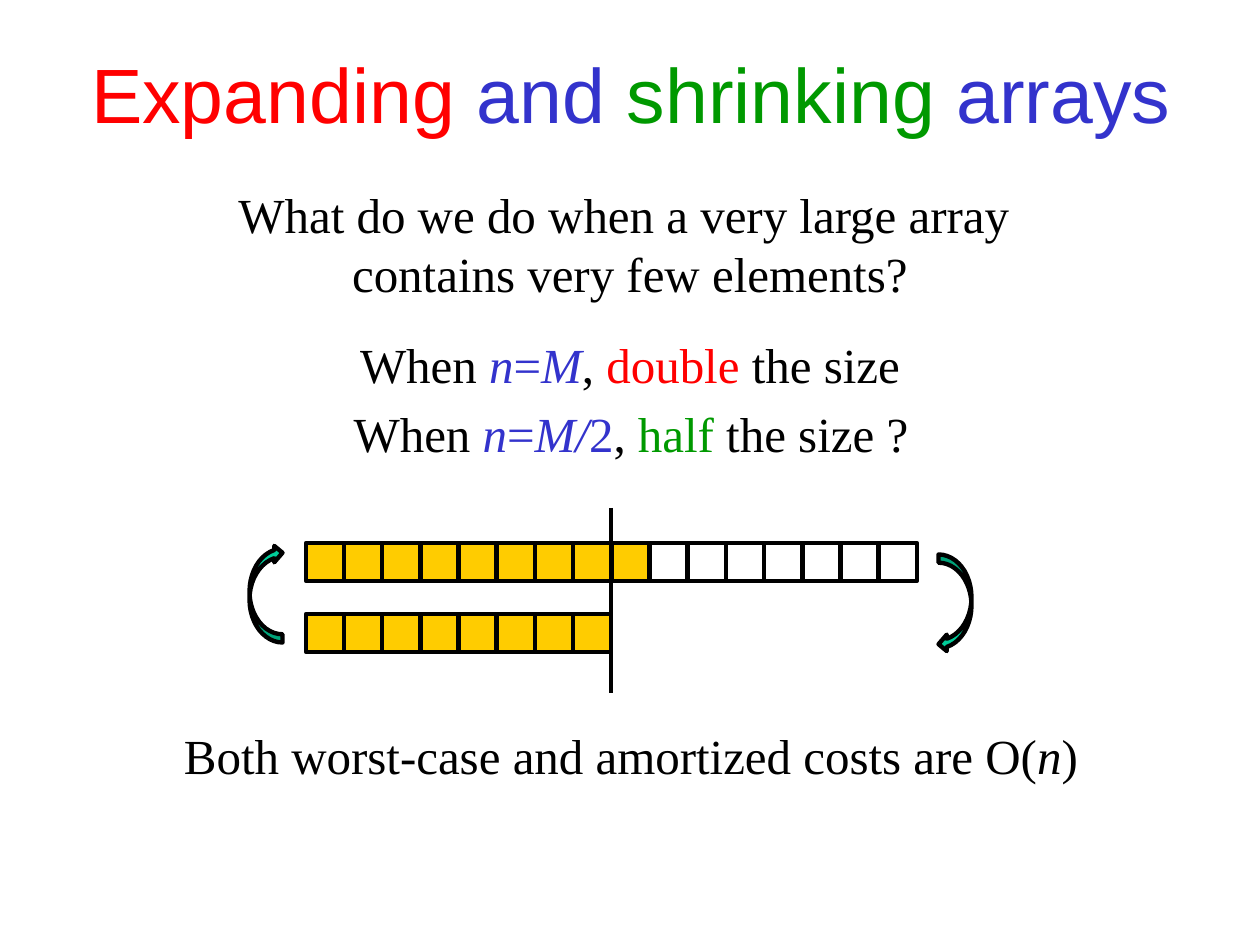
"""Build the slide on expanding and shrinking arrays."""
from pptx import Presentation
from pptx import util as u
from pptx.dml.color import RGBColor
from pptx.enum import shapes, text
from pptx.oxml import parse_xml
from pptx.oxml.ns import nsdecls

SCALE = 914400 / 126
BLACK, BLUE, RED, GREEN = "000000", "3333CC", "FF0000", "009900"
GOLD, TEAL = "FFCC00", "00CC99"
kind = shapes.MSO_SHAPE


def px(*nums):
    return [u.Emu(round(n * SCALE)) for n in nums]


def paint(part, hue):
    part.solid()
    part.fore_color.rgb = RGBColor.from_string(hue)


deck = Presentation()
deck.slide_width, deck.slide_height = px(1260, 945)
slide = deck.slides.add_slide(deck.slide_layouts[6])
items = slide.shapes

texts = [
    (1, 38, 110, "Arial", 44, [("Expanding", RED, False), (" and ", BLUE, False),
                               ("shrinking", GREEN, False), (" arrays", BLUE, False)]),
    (0, 178, 131, "Times New Roman", 28, [("What do we do when a very large array ", BLACK, False),
                                          ("\n", BLACK, False),
                                          ("contains very few elements?", BLACK, False)]),
    (0, 328, 72, "Times New Roman", 28, [("When ", BLACK, False), ("n", BLUE, True),
                                         ("=", BLUE, False), ("M", BLUE, True),
                                         (", ", BLACK, False), ("double", RED, False),
                                         (" the size", BLACK, False)]),
    (1, 397, 72, "Times New Roman", 28, [("When ", BLACK, False), ("n", BLUE, True),
                                         ("=", BLUE, False), ("M/", BLUE, True),
                                         ("2", BLUE, False), (", ", BLACK, False),
                                         ("half", GREEN, False), (" the size ?", BLACK, False)]),
    (1, 719, 72, "Times New Roman", 28, [("Both worst-case and amortized costs are O(", BLACK, False),
                                         ("n", BLACK, True), (")", BLACK, False)]),
]
for left, top, high, font, size, runs in texts:
    frame = items.add_textbox(*px(left, top, 1260, high)).text_frame
    frame.word_wrap = True
    frame.vertical_anchor = text.MSO_ANCHOR.MIDDLE if size == 44 else text.MSO_ANCHOR.TOP
    para = frame.paragraphs[0]
    para.alignment = text.PP_ALIGN.CENTER
    for words, hue, slant in runs:
        if words == "\n":
            para.add_line_break()
            continue
        run = para.add_run()
        run.text = words
        run.font.name, run.font.size, run.font.italic = font, u.Pt(size), slant
        paint(run.font.fill, hue)

cells = [(kind.RECTANGLE, 306 + col * 611 / 16, top, 38, 38, 0, GOLD if col < full else None)
         for top, count, full in [(543, 16, 9), (614, 8, 8)] for col in range(count)]
turns = [(kind.CURVED_DOWN_ARROW, 217, 577, 98, 33, 270, TEAL),
         (kind.CURVED_DOWN_ARROW, 906, 587, 98, 33, 90, TEAL)]
for form, left, top, wide, high, angle, hue in cells + turns:
    shape = items.add_shape(form, *px(left, top, wide, high))
    shape.shadow.inherit = False
    shape.rotation = angle
    if hue:
        paint(shape.fill, hue)
    else:
        shape.fill.background()
    shape.line.width = u.Pt(2.5)
    paint(shape.line.fill, BLACK)

split = items.add_connector(shapes.MSO_CONNECTOR.STRAIGHT, *px(611, 508, 611, 693))
split.line.width = u.Pt(2.5)
paint(split.line.fill, BLACK)
split._element.spPr.append(parse_xml(f"<a:effectLst {nsdecls('a')}/>"))

deck.save("out.pptx")
